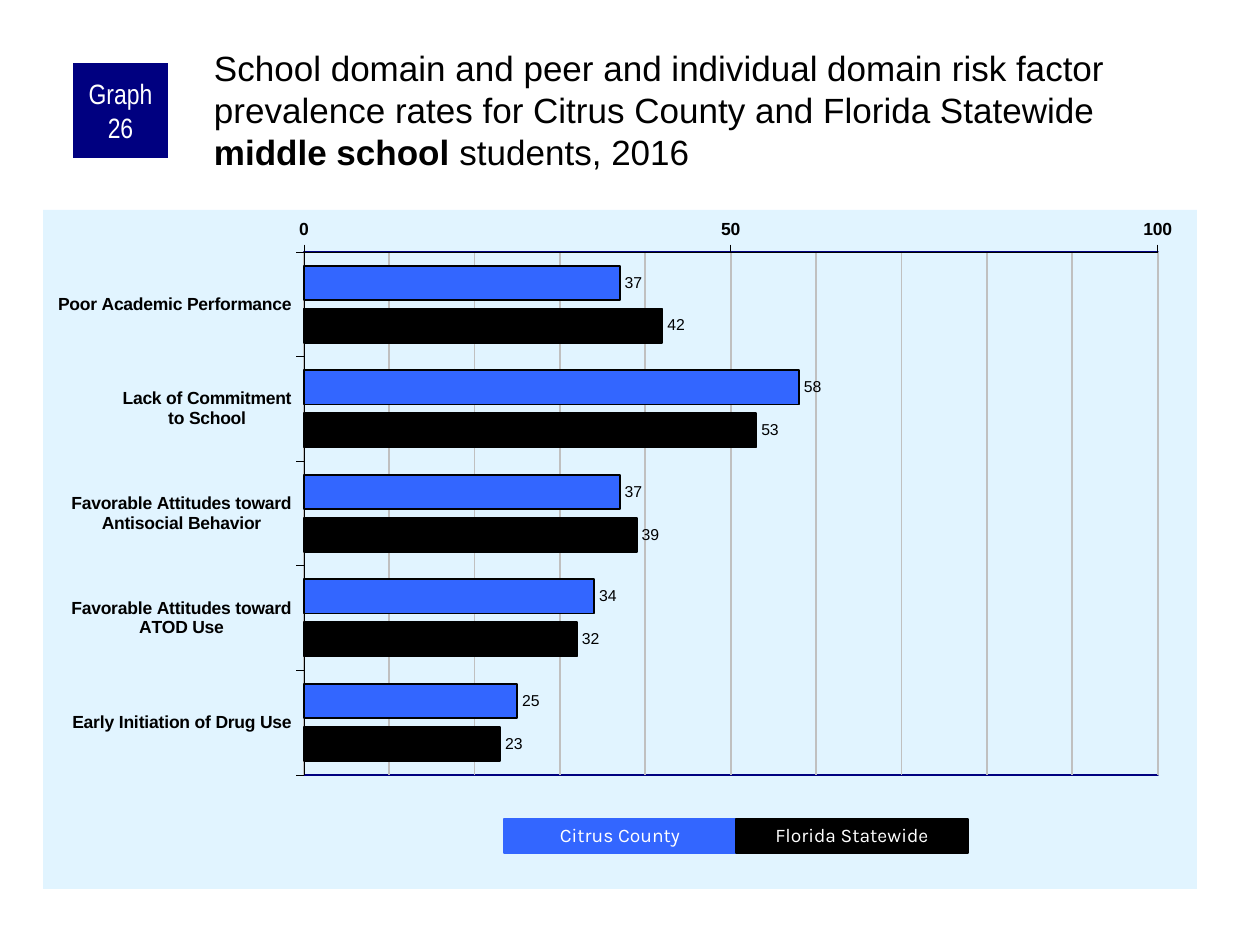
from copy import deepcopy

from pptx import Presentation
from pptx.chart.data import CategoryChartData
from pptx.dml.color import RGBColor
from pptx.enum.chart import XL_AXIS_CROSSES as Crosses
from pptx.enum.chart import XL_CHART_TYPE as ChartType
from pptx.enum.chart import XL_LABEL_POSITION as LabelPosition
from pptx.enum.chart import XL_TICK_MARK as TickMark
from pptx.enum.shapes import MSO_SHAPE as Preset
from pptx.enum.text import MSO_ANCHOR as Anchor
from pptx.enum.text import PP_ALIGN as Align
from pptx.oxml import parse_xml
from pptx.oxml.ns import nsdecls, qn
from pptx.util import Emu, Pt

EMU_PER_PX = 914400 / 126
COLORS = {
    "black": "000000",
    "white": "FFFFFF",
    "navy": "000080",
    "county": "3366FF",
    "panel": "E1F4FF",
    "grid": "C0C0C0",
}
CATEGORIES = [
    "Poor Academic Performance",
    "Lack of Commitment\nto School",
    "Favorable Attitudes toward\nAntisocial Behavior",
    "Favorable Attitudes toward\nATOD Use",
    "Early Initiation of Drug Use",
]
SERIES = [
    ("Citrus County", "county", (37, 58, 37, 34, 25)),
    ("Florida Statewide", "black", (42, 53, 39, 32, 23)),
]
PLOT_LAYOUT = {"x": 0.226, "y": 0.062, "w": 0.74, "h": 0.77}


def px(length):
    return Emu(round(length * EMU_PER_PX))


def color(name):
    return RGBColor.from_string(COLORS[name])


def style_font(font, name, size, color_name, bold=False):
    font.name = name
    font.size = Pt(size)
    font.bold = bold
    font.color.rgb = color(color_name)


def style_line(line, color_name, width):
    line.color.rgb = color(color_name)
    line.width = Pt(width)


def set_insets(text_frame, left, top, right, bottom):
    text_frame.margin_left, text_frame.margin_top = px(left), px(top)
    text_frame.margin_right, text_frame.margin_bottom = px(right), px(bottom)


def add_label_box(slide, box, text, fill, font_name, size):
    """Add a filled rectangle with centred white text."""
    shape = slide.shapes.add_shape(Preset.RECTANGLE, *map(px, box))
    shape.shadow.inherit = False
    shape.fill.solid()
    shape.fill.fore_color.rgb = color(fill)
    shape.line.fill.background()
    text_frame = shape.text_frame
    text_frame.word_wrap = True
    text_frame.vertical_anchor = Anchor.MIDDLE
    text_frame.text = text
    paragraph = text_frame.paragraphs[0]
    paragraph.alignment = Align.CENTER
    style_font(paragraph.runs[0].font, font_name, size, "white")
    return shape


def add_graph_number(slide):
    shape = add_label_box(slide, (73, 63, 95, 95), "Graph 26", "navy", "Arial Narrow", 16)
    set_insets(shape.text_frame, 6, 0, 6, 0)


def add_legend(slide):
    width = 232
    for index, (name, fill, _) in enumerate(SERIES):
        box = (504 + index * width, 819, width, 34)
        shape = add_label_box(slide, box, name, fill, "Karla", 11)
        shape.text_frame.paragraphs[0].line_spacing = 0.9
        style_line(shape.line, fill, 0.75)


def add_title(slide):
    text_frame = slide.shapes.add_textbox(px(210), px(42), px(998), px(105)).text_frame
    text_frame.word_wrap = True
    set_insets(text_frame, 4, 4, 0, 0)
    parts = [
        ("School domain and peer and individual domain risk factor "
         "prevalence rates for Citrus County and Florida Statewide ", False),
        ("middle school", True),
        (" students, 2016", False),
    ]
    for text, bold in parts:
        run = text_frame.paragraphs[0].add_run()
        run.text = text
        style_font(run.font, "Arial", 20, "black", bold)


def style_gridlines(value_axis):
    """Give the major and minor gridlines the same line."""
    value_axis.has_major_gridlines = value_axis.has_minor_gridlines = True
    major = value_axis.major_gridlines
    style_line(major.format.line, "grid", 1)
    chart_space = major.format.line.fill
    del chart_space


def style_axes(chart):
    category_axis, value_axis = chart.category_axis, chart.value_axis
    for axis in (category_axis, value_axis):
        axis.major_tick_mark = TickMark.OUTSIDE
        axis.minor_tick_mark = TickMark.NONE
        style_font(axis.tick_labels.font, "Arial", 10, "black", True)
        style_line(axis.format.line, "black", 0.25)
    category_axis.reverse_order = True
    category_axis.crosses = Crosses.MAXIMUM
    value_axis.minimum_scale, value_axis.maximum_scale = 0, 100
    value_axis.major_unit, value_axis.minor_unit = 50, 10
    style_gridlines(value_axis)
    major, minor = (chart.element.find(f".//{qn(f'c:{kind}Gridlines')}")
                    for kind in ("major", "minor"))
    minor.append(deepcopy(major.find(qn("c:spPr"))))


def style_bars(plot):
    plot.gap_width = 80
    plot.overlap = -25
    plot.vary_by_categories = False
    for series, (_, fill, _) in zip(plot.series, SERIES):
        series.format.fill.solid()
        series.format.fill.fore_color.rgb = color(fill)
        style_line(series.format.line, "black", 1)
        labels = series.data_labels
        labels.show_value = True
        labels.position = LabelPosition.OUTSIDE_END
        style_font(labels.font, "Arial", 9, "black")


def style_areas(chart):
    """Fix the inner plot area, outline it, and fill the chart panel."""
    chart_space = chart.element
    plot_area = chart_space.find(".//" + qn("c:plotArea"))
    for layout in plot_area.findall(qn("c:layout")):
        plot_area.remove(layout)
    modes = "".join(f'<c:{side}Mode val="edge"/>' for side in "xy")
    sizes = "".join(f'<c:{key} val="{value}"/>' for key, value in PLOT_LAYOUT.items())
    plot_area.insert(0, parse_xml(
        f'<c:layout {nsdecls("c")}><c:manualLayout><c:layoutTarget val="inner"/>'
        f'{modes}{sizes}</c:manualLayout></c:layout>'))
    plot_area.append(parse_xml(
        f'<c:spPr {nsdecls("c", "a")}><a:noFill/><a:ln w="12700"><a:solidFill>'
        f'<a:srgbClr val="{COLORS["navy"]}"/></a:solidFill></a:ln></c:spPr>'))
    chart_space.find(qn("c:txPr")).addprevious(parse_xml(
        f'<c:spPr {nsdecls("c", "a")}><a:solidFill><a:srgbClr val="{COLORS["panel"]}"/>'
        '</a:solidFill><a:ln><a:noFill/></a:ln></c:spPr>'))


def add_risk_chart(slide):
    data = CategoryChartData()
    data.categories = CATEGORIES
    for name, _, values in SERIES:
        data.add_series(name, values)
    box = map(px, (43, 210, 1154, 679))
    chart = slide.shapes.add_chart(ChartType.BAR_CLUSTERED, *box, data).chart
    chart.has_title = False
    chart.has_legend = False
    style_font(chart.font, "Arial", 11.8, "black")
    style_axes(chart)
    style_bars(chart.plots[0])
    style_areas(chart)


def main():
    presentation = Presentation()
    presentation.slide_width, presentation.slide_height = px(1260), px(945)
    slide = presentation.slides.add_slide(presentation.slide_layouts[6])
    add_risk_chart(slide)
    add_graph_number(slide)
    add_title(slide)
    add_legend(slide)
    presentation.save("out.pptx")


if __name__ == "__main__":
    main()
